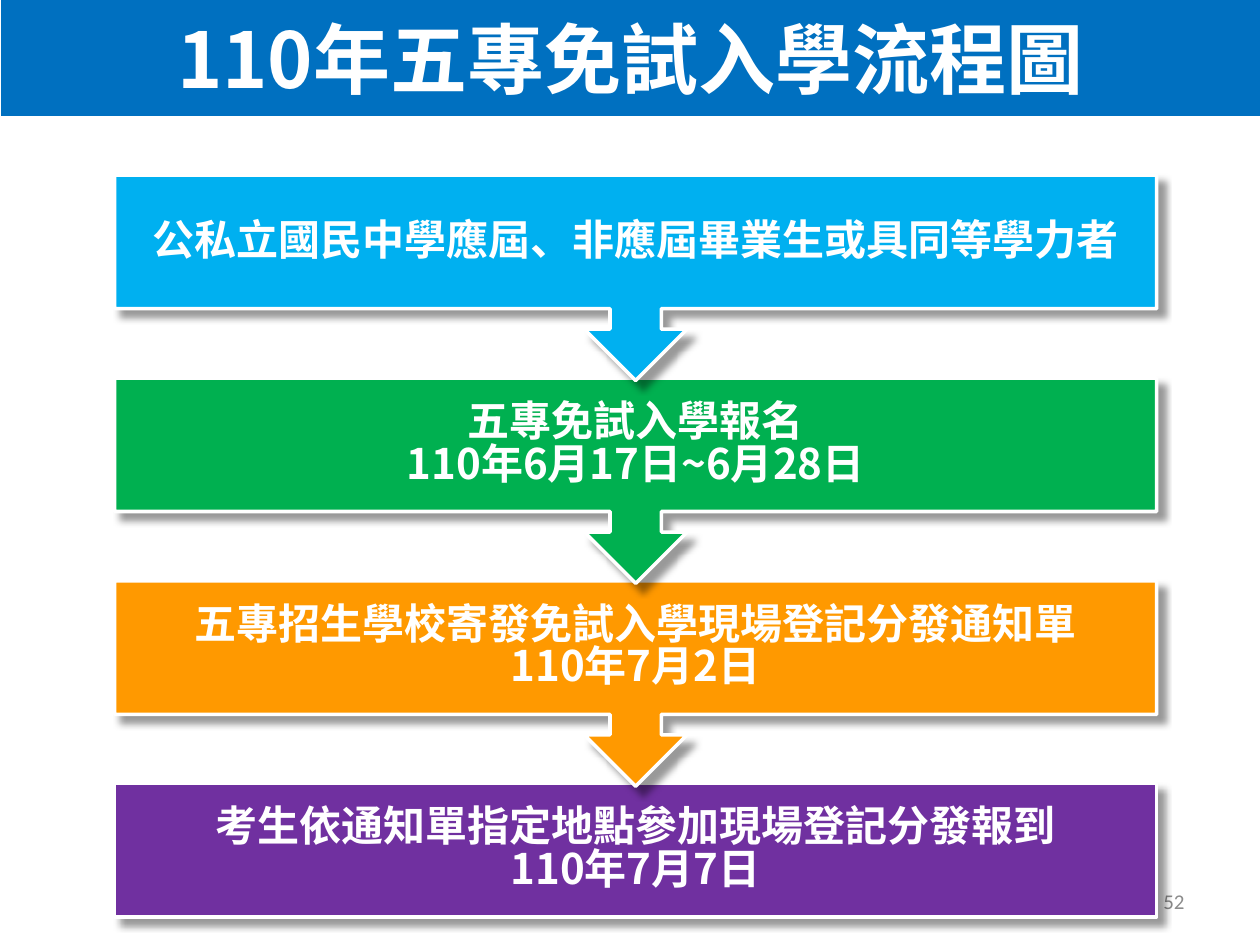
from lxml import etree
from pptx import Presentation
from pptx.dml.color import RGBColor
from pptx.enum import shapes, text
from pptx.oxml import ns
from pptx.util import Inches, Pt

COLORS = {"white": "FFFFFF", "banner": "0070C0", "sky": "00B0F0", "green": "00B050",
          "orange": "FF9900", "purple": "7030A0", "gray": "8C8C8C", "shadow": "000000"}
CJK = "Noto Sans CJK SC"
STEPS = [
    ("sky", ["公私立國民中學應屆、非應屆畢業生或具同等學力者"]),
    ("green", ["五專免試入學報名", "110年6月17日~6月28日"]),
    ("orange", ["五專招生學校寄發免試入學現場登記分發通知單", "110年7月2日"]),
    ("purple", ["考生依通知單指定地點參加現場登記分發報到", "110年7月7日"]),
]
LEFT, TOP, WIDTH, PITCH = 0.91, 1.39, 8.27, 1.61
BODY_HEIGHT, CALLOUT_HEIGHT = 1.06, 1.63


def style_paragraph(para, size, color, name, bold, align):
    para.alignment = align
    font = para.font
    font.size, font.bold, font.name = Pt(size), bold, name
    font.color.rgb = RGBColor.from_string(COLORS[color])
    etree.SubElement(font._element, ns.qn("a:ea"), typeface=name)


def add_shadow(shape):
    shape.shadow.inherit = False
    effects = shape._element.spPr.find(ns.qn("a:effectLst"))
    outer = etree.SubElement(effects, ns.qn("a:outerShdw"), blurRad=str(Pt(4)),
                             dist=str(Pt(5)), dir="2700000", rotWithShape="0")
    color = etree.SubElement(outer, ns.qn("a:srgbClr"), val=COLORS["shadow"])
    etree.SubElement(color, ns.qn("a:alpha"), val="40000")


deck = Presentation()
deck.slide_width, deck.slide_height = Inches(10), Inches(7.5)
page = deck.slides.add_slide(deck.slide_layouts[5])

title = page.shapes.title
title.left, title.top = Inches(0.01), Inches(-0.01)
title.width, title.height = Inches(9.99), Inches(0.93)
title.fill.solid()
title.fill.fore_color.rgb = RGBColor.from_string(COLORS["banner"])
title.text_frame.text = "110年五專免試入學流程圖"
title.text_frame.auto_size = text.MSO_AUTO_SIZE.NONE
title.text_frame.vertical_anchor = text.MSO_ANCHOR.MIDDLE
style_paragraph(title.text_frame.paragraphs[0], 44, "white", CJK, True, text.PP_ALIGN.CENTER)

number = page.shapes.add_textbox(Inches(7.17), Inches(6.95), Inches(2.33), Inches(0.4))
number.text_frame.word_wrap = True
number.text_frame.vertical_anchor = text.MSO_ANCHOR.MIDDLE
number.text_frame.text = "52"
style_paragraph(number.text_frame.paragraphs[0], 12, "gray", "Calibri", False, text.PP_ALIGN.RIGHT)

for index, (color, lines) in reversed(list(enumerate(STEPS))):
    top = Inches(TOP + index * PITCH)
    last = index == len(STEPS) - 1
    kind = shapes.MSO_SHAPE.RECTANGLE if last else shapes.MSO_SHAPE.UP_ARROW_CALLOUT
    height = BODY_HEIGHT if last else CALLOUT_HEIGHT
    step = page.shapes.add_shape(kind, Inches(LEFT), top, Inches(WIDTH), Inches(height))
    if not last:
        step.rotation = 180
        for position, value in enumerate([0.25, 0.25, 0.25, 0.65]):
            step.adjustments[position] = value
    step.fill.solid()
    step.fill.fore_color.rgb = RGBColor.from_string(COLORS[color])
    step.line.color.rgb = RGBColor.from_string(COLORS["white"])
    step.line.width = Pt(2)
    add_shadow(step)

    box = page.shapes.add_textbox(Inches(LEFT), top, Inches(WIDTH), Inches(BODY_HEIGHT))
    frame = box.text_frame
    frame.word_wrap = True
    frame.vertical_anchor = text.MSO_ANCHOR.MIDDLE
    frame.margin_left = frame.margin_right = Inches(0.19)
    frame.margin_top = frame.margin_bottom = Inches(0.19)
    frame.text = "\n".join(lines)
    for para in frame.paragraphs:
        para.line_spacing = 0.85 if len(lines) > 1 else 0.9
        style_paragraph(para, 24, "white", CJK, True, text.PP_ALIGN.CENTER)

deck.save("out.pptx")
